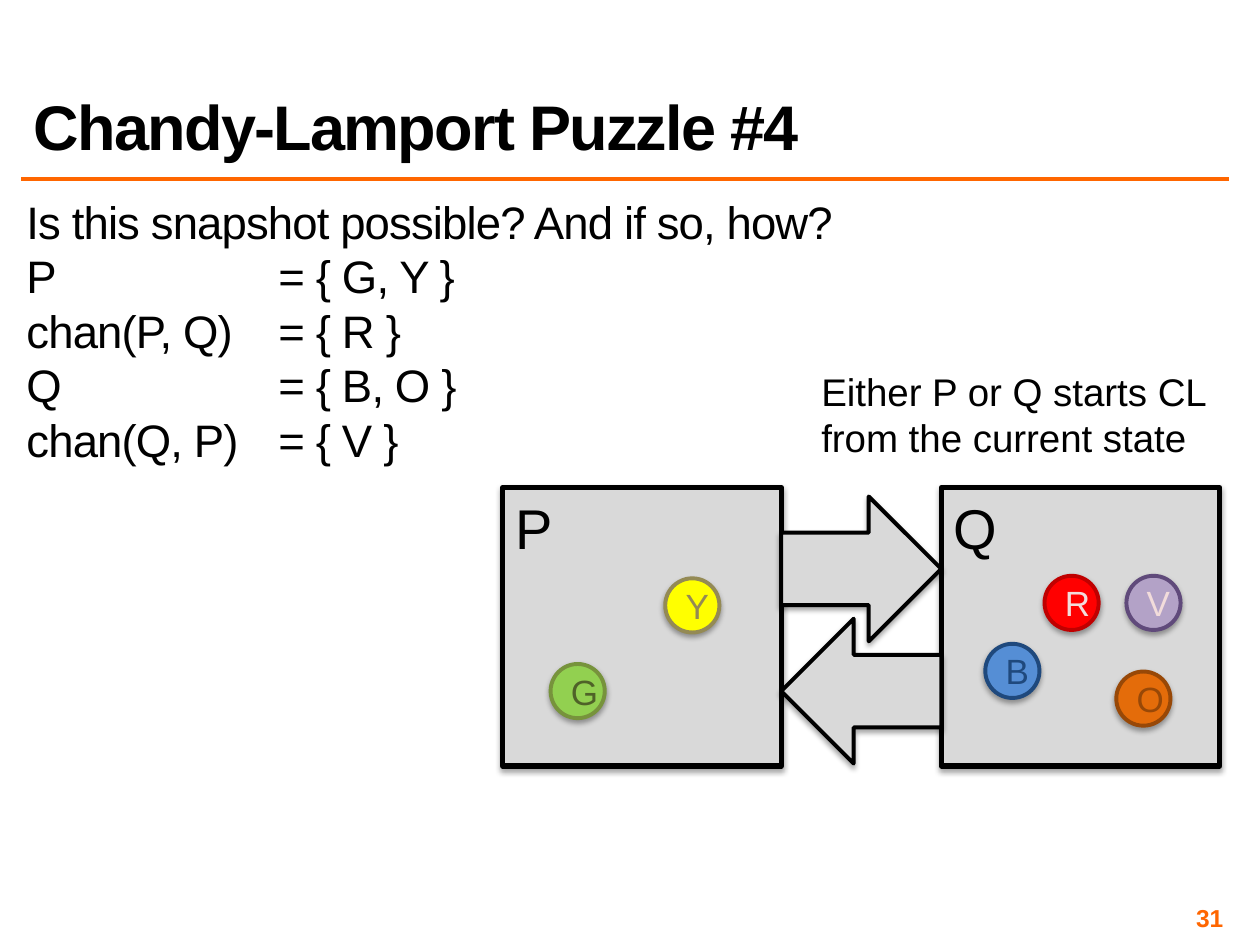
from typing import NamedTuple

from lxml import etree
from pptx import Presentation
from pptx import util as u
from pptx.dml.color import RGBColor
from pptx.enum import shapes, text
from pptx.oxml import ns

ORANGE = "FF6600"
BLACK = "000000"
GREY = "D9D9D9"
BOX_SIZE = 2.21
ARROW_WIDTH, ARROW_HEIGHT = 1.27, 1.15
TOKEN_SIZE = 0.43
Kind = shapes.MSO_SHAPE


class Process(NamedTuple):
    name: str
    left: float


class Channel(NamedTuple):
    top: float
    rotation: int


class Token(NamedTuple):
    letter: str
    left: float
    top: float
    fill: str
    outline: str
    ink: str


PROCESSES = [Process("P", 3.99), Process("Q", 7.47)]
CHANNELS = [Channel(3.94, 0), Channel(4.91, 180)]
TOKENS = [
    Token("R", 8.29, 4.57, "FF0000", "C00000", "F2DCDB"),
    Token("G", 4.37, 5.27, "92D050", "77933C", "4F6228"),
    Token("B", 7.82, 5.11, "558ED5", "1F497D", "1F497D"),
    Token("Y", 5.28, 4.59, "FFFF00", "948A54", "948A54"),
    Token("O", 8.86, 5.33, "E46C0A", "984807", "984807"),
    Token("V", 8.94, 4.57, "B3A2C7", "604A7B", "F2DCDB"),
]
QUESTION = [
    "Is this snapshot possible? And if so, how?",
    "P\t= { G, Y }",
    "chan(P, Q)\t= { R }",
    "Q\t= { B, O }",
    "chan(Q, P)\t= { V }",
]


def colour(value: str) -> RGBColor:
    return RGBColor.from_string(value)


def add_child(parent, tag: str, **attributes: str):
    return etree.SubElement(parent, ns.qn(tag), attributes)


def write(shape, lines: list[str], *, size: float, ink: str = BLACK, bold: bool = False,
          align=text.PP_ALIGN.LEFT, anchor=text.MSO_ANCHOR.TOP, inset: float | None = None,
          line_spacing: float | None = None, before: float = 0, tracking: float = 0,
          tab: float | None = None) -> None:
    """Fill a shape with one paragraph per line; inset and tab are in inches."""
    frame = shape.text_frame
    frame.word_wrap = True
    frame.vertical_anchor = anchor
    if inset is not None:
        frame.margin_left = frame.margin_right = u.Inches(inset)
        frame.margin_top = frame.margin_bottom = u.Inches(inset)
    for index, line in enumerate(lines):
        para = frame.add_paragraph() if index else frame.paragraphs[0]
        para.alignment = align
        para.space_before = u.Pt(before)
        if line_spacing:
            para.line_spacing = line_spacing
        if tab:
            stops = add_child(para._p.get_or_add_pPr(), "a:tabLst")
            add_child(stops, "a:tab", pos=str(u.Inches(tab)), algn="l")
        span = para.add_run()
        span.text = line
        span.font.name = "Arial"
        span.font.size = u.Pt(size)
        span.font.bold = bold
        span.font.color.rgb = colour(ink)
        if tracking:
            span._r.get_or_add_rPr().set("spc", str(round(tracking * 100)))


def add_text(page, lines: list[str], left: float, top: float, width: float, height: float,
             **text_format) -> None:
    box = page.shapes.add_textbox(*map(u.Inches, (left, top, width, height)))
    write(box, lines, **text_format)


def add_figure(page, kind, left: float, top: float, width: float, height: float, *,
               fill: str = GREY, outline: str = BLACK, weight: float = 2.25):
    """Add a filled, outlined shape with a soft shadow below it."""
    shape = page.shapes.add_shape(kind, *map(u.Inches, (left, top, width, height)))
    shape.fill.solid()
    shape.fill.fore_color.rgb = colour(fill)
    shape.line.color.rgb = colour(outline)
    shape.line.width = u.Pt(weight)
    shape.shadow.inherit = False
    effects = shape._element.spPr.find(ns.qn("a:effectLst"))
    shadow = add_child(effects, "a:outerShdw", blurRad=str(u.Pt(3.1)), dist=str(u.Pt(1.8)),
                       dir="5400000", rotWithShape="0")
    add_child(add_child(shadow, "a:srgbClr", val=BLACK), "a:alpha", val="35000")
    return shape


def add_rule(page, left: float, right: float, y: float) -> None:
    rule = page.shapes.add_connector(
        shapes.MSO_CONNECTOR.STRAIGHT, *map(u.Inches, (left, y, right, y)))
    rule.line.color.rgb = colour(ORANGE)
    rule.line.width = u.Pt(2)
    add_child(rule._element.spPr, "a:effectLst")


def add_process(page, process: Process) -> None:
    box = add_figure(page, Kind.RECTANGLE, process.left, 3.87, BOX_SIZE, BOX_SIZE, weight=3)
    write(box, [process.name], size=32)


def add_channel(page, channel: Channel) -> None:
    left = PROCESSES[0].left + BOX_SIZE
    arrow = add_figure(page, Kind.RIGHT_ARROW, left, channel.top, ARROW_WIDTH, ARROW_HEIGHT)
    arrow.rotation = channel.rotation


def add_token(page, token: Token) -> None:
    disc = add_figure(page, Kind.OVAL, token.left, token.top, TOKEN_SIZE, TOKEN_SIZE,
                      fill=token.fill, outline=token.outline)
    write(disc, [token.letter], size=20, ink=token.ink,
          align=text.PP_ALIGN.CENTER, anchor=text.MSO_ANCHOR.MIDDLE)


def main() -> None:
    deck = Presentation()
    deck.slide_width, deck.slide_height = u.Inches(10), u.Inches(7.5)
    page = deck.slides.add_slide(deck.slide_layouts[6])

    add_rule(page, 0.17, 9.75, 1.42)
    add_text(page, QUESTION, 0.17, 1.58, 9.58, 2.46, size=26, inset=0.04,
             line_spacing=0.8, before=6.2, tracking=-0.5, tab=2)
    add_text(page, ["31"], 7.42, 7.17, 2.33, 0.23, size=14, ink=ORANGE, bold=True, inset=0.04,
             align=text.PP_ALIGN.RIGHT, anchor=text.MSO_ANCHOR.MIDDLE)
    add_text(page, ["Chandy-Lamport Puzzle #4"], 0.17, 0.17, 9.58, 1.17, size=36, bold=True,
             anchor=text.MSO_ANCHOR.BOTTOM, line_spacing=0.8, tracking=-1)

    for process in PROCESSES:
        add_process(page, process)
    for channel in CHANNELS:
        add_channel(page, channel)
    for token in TOKENS:
        add_token(page, token)
    add_text(page, ["Either P or Q starts CL from the current state"],
             6.42, 2.87, 3.33, 0.84, size=22)

    deck.save("out.pptx")


if __name__ == "__main__":
    main()
